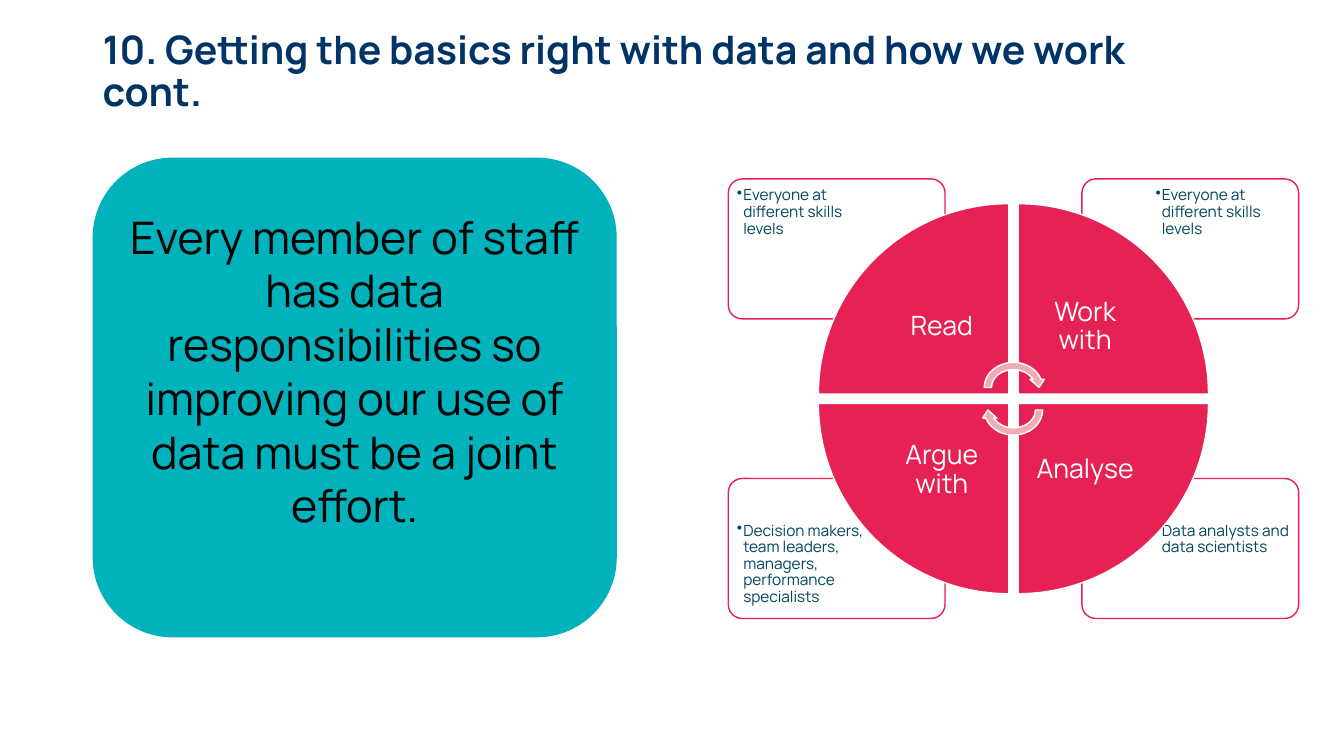
from lxml.etree import SubElement
from pptx import Presentation
from pptx.dml.color import RGBColor
from pptx.enum.shapes import MSO_SHAPE as Shape
from pptx.enum.text import MSO_ANCHOR as Anchor, PP_ALIGN as Align
from pptx.oxml.ns import qn
from pptx.util import Pt

FONT = "Manrope"
COLORS = {
    "navy": "003366", "teal": "00B2BB", "black": "000000", "white": "FFFFFF",
    "crimson": "E62154", "pink": "F0ACB4", "ink": "00445E",
}
# Clockwise from top left: horizontal side, vertical side, label, who does it
QUADRANTS = [
    (-1, -1, "Read", "Everyone at different skills levels"),
    (1, -1, "Work with", "Everyone at different skills levels"),
    (1, 1, "Analyse", "Data analysts and data scientists"),
    (-1, 1, "Argue with",
     "Decision makers, team leaders, managers, performance specialists"),
]


def rgb(name):
    return RGBColor.from_string(COLORS[name])


def points(box):
    return [Pt(length) for length in box]


def add_filled(slide, kind, box, fill, line=None):
    shape = slide.shapes.add_shape(kind, *points(box))
    shape.shadow.inherit = False
    shape.fill.solid()
    shape.fill.fore_color.rgb = rgb(fill)
    if line:
        shape.line.color.rgb = rgb(line)
        shape.line.width = Pt(1)
    else:
        shape.line.fill.background()
    return shape


def set_up_frame(frame, anchor, insets):
    """Apply wrapping, anchor and left, top, right, bottom insets."""
    frame.word_wrap = True
    frame.vertical_anchor = anchor
    (frame.margin_left, frame.margin_top,
     frame.margin_right, frame.margin_bottom) = points(insets)
    return frame.paragraphs[0]


def add_text_box(slide, box, anchor, insets):
    frame = slide.shapes.add_textbox(*points(box)).text_frame
    paragraph = set_up_frame(frame, anchor, insets)
    paragraph.line_spacing = 0.9
    return paragraph


def add_run(paragraph, text, size, color, bold=False):
    run = paragraph.add_run()
    run.text = text
    run.font.name = FONT
    run.font.size = Pt(size)
    run.font.bold = bold
    run.font.color.rgb = rgb(color)


def hang_bullet(paragraph, indent):
    properties = paragraph._p.get_or_add_pPr()
    properties.set("marL", str(Pt(indent)))
    properties.set("indent", str(Pt(-indent)))
    SubElement(properties, qn("a:buChar"), char="•")


def add_title(slide, box):
    title = add_text_box(slide, box, Anchor.MIDDLE, (7.2, 3.6, 7.2, 3.6))
    add_run(title, "10. Getting the basics right with data and how we work",
            28, "navy", bold=True)
    title.add_line_break()
    add_run(title, "cont.", 28, "navy", bold=True)


def add_message(slide, box):
    panel = add_filled(slide, Shape.ROUNDED_RECTANGLE, box, "teal")
    message = set_up_frame(panel.text_frame, Anchor.MIDDLE,
                           (7.2, 3.6, 7.2, 42))
    message.alignment = Align.CENTER
    add_run(message, "Every member of staff has data responsibilities so "
            "improving our use of data must be a joint effort.", 32, "black")


def add_skills_cycle(slide, box):
    left, top, width, height = box
    center_x, center_y = left + width / 2, top + height / 2
    card_width, card_height = 154.8, 100
    note_width, note_height, note_margin = 104.4, 70.6, 2
    wedge, label_size, half_gap = 136, 95.8, 3.3

    def place(side_x, side_y, near_x, near_y, w, h):
        """Box in one quadrant, at the given distances from the centre."""
        return (center_x + side_x * (near_x + w / 2) - w / 2,
                center_y + side_y * (near_y + h / 2) - h / 2, w, h)

    for side_x, side_y, _, audience in reversed(QUADRANTS):
        card = add_filled(
            slide, Shape.ROUNDED_RECTANGLE,
            place(side_x, side_y, width / 2 - card_width,
                  height / 2 - card_height, card_width, card_height),
            "white", "crimson")
        card.adjustments[0] = 0.1
        fill_color = card.fill._xPr.find(".//" + qn("a:srgbClr"))
        SubElement(fill_color, qn("a:alpha"), val="90000")
        note = add_text_box(
            slide,
            place(side_x, side_y, width / 2 - note_margin - note_width,
                  height / 2 - note_margin - note_height,
                  note_width, note_height),
            Anchor.TOP, [4.2] * 4)
        hang_bullet(note, 4.5)
        add_run(note, audience, 11, "ink")

    for turn, (side_x, side_y, skill, _) in enumerate(QUADRANTS):
        quarter = add_filled(
            slide, Shape.PIE_WEDGE,
            place(side_x, side_y, half_gap, half_gap, wedge, wedge),
            "crimson", "white")
        quarter.rotation = 90 * turn
        label = add_text_box(
            slide,
            place(side_x, side_y, half_gap, half_gap, label_size, label_size),
            Anchor.MIDDLE, [10.8] * 4)
        label.alignment = Align.CENTER
        add_run(label, skill, 19, "white")

    arrow_width, arrow_height = 46.8, 41
    for offset, rotation in ((-8, 0), (8, 180)):
        arrow = add_filled(
            slide, Shape.CIRCULAR_ARROW,
            (center_x - arrow_width / 2, center_y + offset - arrow_height / 2,
             arrow_width, arrow_height),
            "pink", "white")
        arrow.rotation = rotation


def main():
    deck = Presentation()
    deck.slide_width, deck.slide_height = Pt(960), Pt(540)
    slide = deck.slides.add_slide(deck.slide_layouts[6])
    add_title(slide, (66.2, 0, 769, 104.4))
    add_message(slide, (66.2, 112.6, 374.4, 342.7))
    add_skills_cycle(slide, (520.2, 127.8, 407.4, 314))
    deck.save("out.pptx")


if __name__ == "__main__":
    main()
